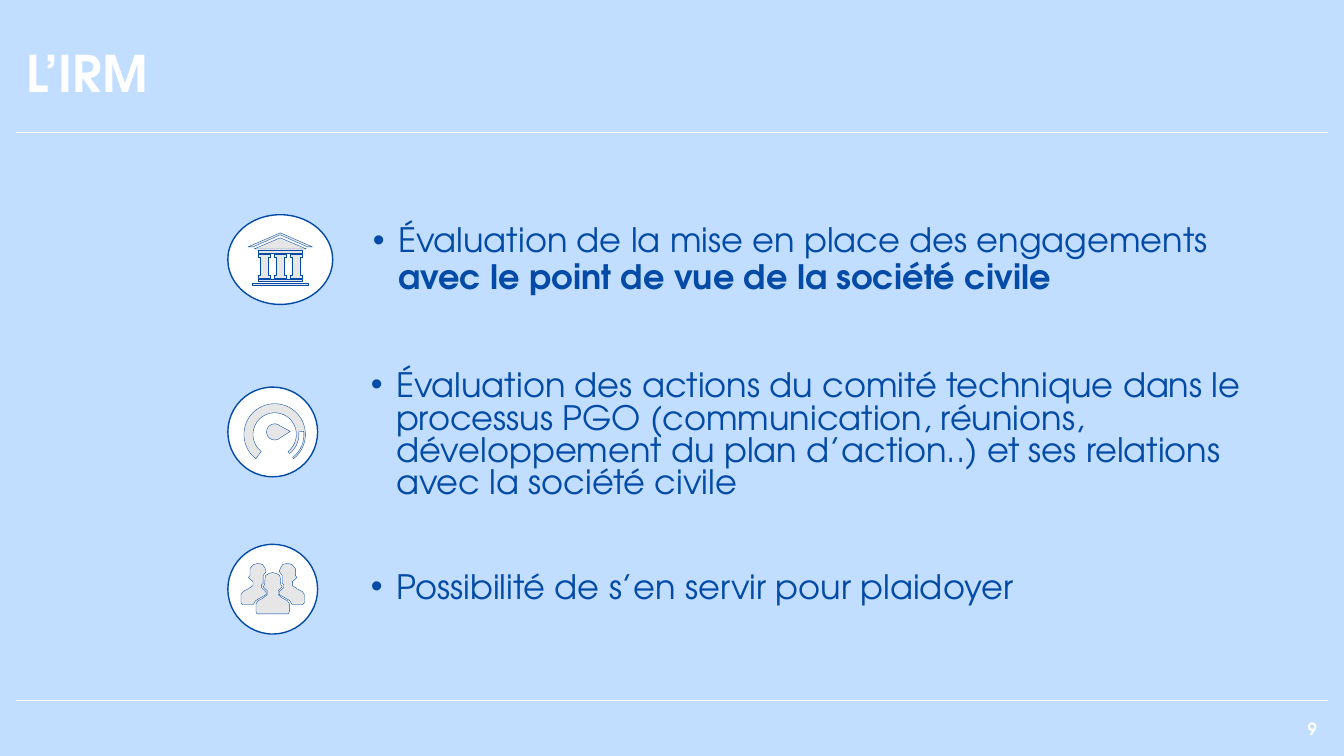
from math import cos, radians, sin

from lxml import etree
from pptx import Presentation
from pptx.dml.color import RGBColor
from pptx.enum.shapes import MSO_CONNECTOR, MSO_SHAPE
from pptx.enum.text import MSO_ANCHOR, PP_ALIGN
from pptx.oxml.ns import qn
from pptx.util import Emu, Pt

LINE = MSO_CONNECTOR.STRAIGHT
OVAL = MSO_SHAPE.OVAL
MIDDLE = MSO_ANCHOR.MIDDLE
LEFT, RIGHT = PP_ALIGN.LEFT, PP_ALIGN.RIGHT
SKY = RGBColor(0xC1, 0xDD, 0xFF)
BLUE = RGBColor(0x03, 0x4B, 0xA6)
WHITE = RGBColor(0xFF, 0xFF, 0xFF)
GREY = RGBColor(0xE7, 0xE6, 0xE6)
FONT = "TeX Gyre Adventor"

COLS, ROWS = 1333, 750
CELL = Emu(9144)
EDGE = 16

deck = Presentation()
deck.slide_width, deck.slide_height = COLS * CELL, ROWS * CELL
slide = deck.slides.add_slide(deck.slide_layouts[6])
slide.background.fill.solid()
slide.background.fill.fore_color.rgb = SKY
shapes = slide.shapes


def add_text(box, text, size, color, bold=False, align=LEFT):
    frame = shapes.add_textbox(*[n * CELL for n in box]).text_frame
    frame.word_wrap = True
    frame.vertical_anchor = MIDDLE
    para = frame.paragraphs[0]
    para.text = text
    para.alignment = align
    for run in para.runs:
        run.font.name = FONT
        run.font.size = Pt(size)
        run.font.bold = bold
        run.font.color.rgb = color
    return para


def add_icon(loops):
    path = None
    for loop in loops:
        spots = [(x * CELL, y * CELL) for x, y in loop]
        if path is None:
            path = shapes.build_freeform(*spots[0], scale=1.0)
        else:
            path.move_to(*spots[0])
        path.add_line_segments(spots[1:], close=True)
    icon = path.convert_to_shape()
    icon.shadow.inherit = False
    icon.fill.solid()
    icon.fill.fore_color.rgb = GREY
    icon.line.color.rgb = BLUE
    icon.line.width = Pt(0.25)


for row in (131, 695):
    rule = shapes.add_connector(
        LINE, EDGE * CELL, row * CELL, (COLS - EDGE) * CELL, row * CELL)
    rule.line.color.rgb = WHITE
    rule.line.width = Pt(0.75)
    etree.SubElement(rule._element.spPr, qn("a:effectLst"))

add_text((EDGE, 32, 984, 88), "L’IRM", 36, WHITE, True).line_spacing = 0.9
add_text((1016, 703, 300, 40), "9", 12, WHITE, True, RIGHT)

items = [
    ((360, 185, 897, 146), 0.9, (213, 104),
     "Évaluation de la mise en place des engagements\v"
     "avec le point de vue de la société civile"),
    ((358, 362, 899, 142), 0.8, (384, 89),
     "Évaluation des actions du comité technique dans le processus PGO "
     "(communication, réunions, développement du plan d’action..) "
     "et ses relations avec la société civile"),
    ((358, 526, 767, 115), 0.9, (540, 89),
     "Possibilité de s’en servir pour plaidoyer"),
]
for box, space, (top, width), text in items:
    para = add_text(box, text, 24, BLUE)
    para.line_spacing = space
    para.space_before = Pt(10)
    for run in para.runs[1:]:
        run.font.bold = True
    props = para._p.get_or_add_pPr()
    props.set("marL", str(25 * CELL))
    props.set("indent", str(-25 * CELL))
    etree.SubElement(props, qn("a:buFont"), typeface="Arial")
    etree.SubElement(props, qn("a:buChar"), char="•")
    disc = shapes.add_shape(OVAL, 226 * CELL, top * CELL, width * CELL, 89 * CELL)
    disc.shadow.inherit = False
    disc.fill.solid()
    disc.fill.fore_color.rgb = WHITE
    disc.line.color.rgb = BLUE
    disc.line.width = Pt(1)

temple = [
    [(278, 231), (310, 245), (305, 245), (278, 233), (251, 245), (246, 245)],
    [(278, 236), (304, 247), (252, 247)],
]
for x, y, wide, high in ((256, 248, 44, 3), (256, 277, 44, 2), (250, 281, 56, 2)):
    temple.append([(x, y), (x + wide, y), (x + wide, y + high), (x, y + high)])
half = [(6, 252), (6, 255), (4, 255), (4, 273), (6, 273), (6, 276)]
for i in range(3):
    mid = 262.5 + 15.5 * i
    temple.append([(mid + x, y) for x, y in half]
                  + [(mid - x, y) for x, y in reversed(half)])
add_icon(temple)

dial = []
for size, start, stop in ((30.5, 128, 412), (29, 412, 354),
                          (24, 354, 412), (21.5, 412, 128)):
    for i in range(41):
        turn = radians(start + (stop - start) * i / 40)
        dial.append((272.5 + size * cos(turn), 431 + size * sin(turn)))
drop = [(288, 428)]
for i in range(25):
    turn = radians(50 + 260 * i / 24)
    drop.append((272.5 + 8 * cos(turn), 428.5 + 8 * sin(turn)))
add_icon([dial, drop])

axis = 270.5
half = [(0, 568), (4, 569), (7, 571), (7.5, 573), (8, 580), (9.5, 582),
        (7.5, 584), (5.5, 586), (5.5, 590), (9, 593), (14.5, 596),
        (16.5, 599), (16.5, 607), (15.5, 609)]
side = [(14.5, 559), (19, 560), (22.5, 564), (22.5, 571), (24, 573),
        (22, 575), (19.5, 577), (19.5, 581), (24, 584), (29.5, 587),
        (31.5, 590), (31.5, 598), (29.5, 600), (19.5, 600), (17, 596),
        (12, 593), (6.5, 590), (6.5, 587), (8.5, 585), (11, 583),
        (11, 580), (9.5, 579), (9.5, 571), (6.5, 567), (7.5, 564), (10, 560)]
add_icon([
    [(axis + x, y) for x, y in half] + [(axis - x, y) for x, y in reversed(half)],
    [(axis - x, y) for x, y in side],
    [(axis + x, y) for x, y in side],
])

deck.save("out.pptx")
